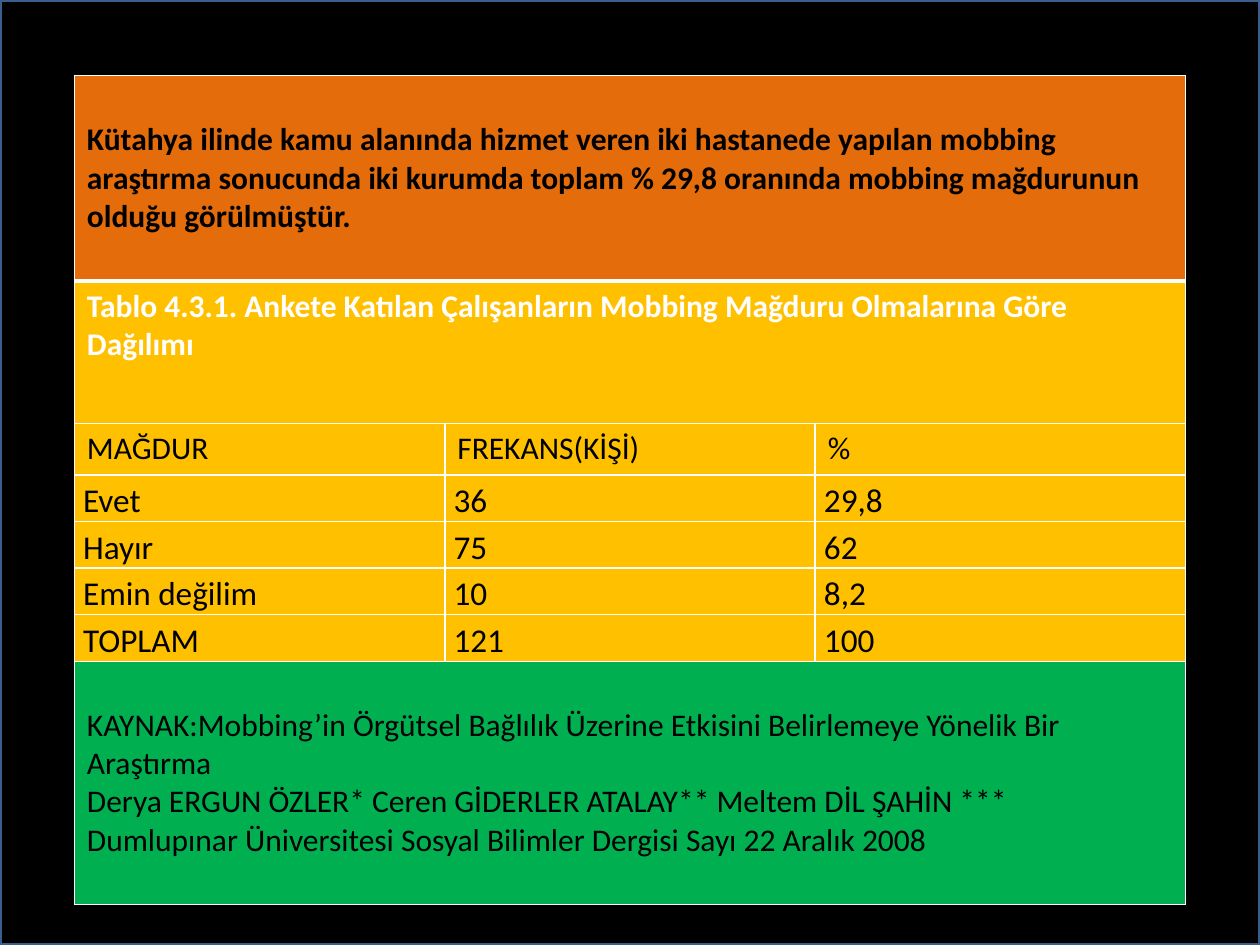
from lxml.etree import SubElement
from pptx import Presentation
from pptx.dml.color import RGBColor
from pptx.enum.shapes import MSO_SHAPE
from pptx.enum.text import MSO_ANCHOR
from pptx.oxml.ns import qn
from pptx.util import Inches, Pt

BLACK = RGBColor(0x00, 0x00, 0x00)
WHITE = RGBColor(0xFF, 0xFF, 0xFF)
BLUE = RGBColor(0x3A, 0x5F, 0x8C)
ORANGE = RGBColor(0xE4, 0x6C, 0x0A)
GOLD = RGBColor(0xFF, 0xC0, 0x00)
GREEN = RGBColor(0x00, 0xB0, 0x50)

INTRO = ("Kütahya ilinde kamu alanında hizmet veren iki hastanede yapılan mobbing "
         "araştırma sonucunda iki kurumda toplam % 29,8 oranında mobbing mağdurunun "
         "olduğu görülmüştür.")
TITLE = "Tablo 4.3.1. Ankete Katılan Çalışanların Mobbing Mağduru Olmalarına Göre Dağılımı"
HEADS = ["MAĞDUR", "FREKANS(KİŞİ)", "%"]
DATA = [
    ["Evet", "36", "29,8"],
    ["Hayır", "75", "62"],
    ["Emin değilim", "10", "8,2"],
    ["TOPLAM", "121", "100"],
]
SOURCE = "\n".join([
    "KAYNAK:Mobbing’in Örgütsel Bağlılık Üzerine Etkisini Belirlemeye Yönelik Bir Araştırma",
    "Derya ERGUN ÖZLER* Ceren GİDERLER ATALAY** Meltem DİL ŞAHİN ***",
    "Dumlupınar Üniversitesi Sosyal Bilimler Dergisi Sayı 22 Aralık 2008",
])
HEIGHTS = [1.63, 1.13, 0.41] + [0.37] * len(DATA) + [1.93]


def add_back(slide, left, top, width, height):
    """Place the framed black backdrop in the given box."""
    back = slide.shapes.add_shape(MSO_SHAPE.RECTANGLE, left, top, width, height)
    back.shadow.inherit = False
    back.fill.solid()
    back.fill.fore_color.rgb = BLACK
    back.line.color.rgb = BLUE
    back.line.width = Pt(2)


def set_edges(cell, top=1, bottom=1):
    """Draw white borders round a cell, with widths in points."""
    props = cell._tc.get_or_add_tcPr()
    for side, size in (("L", 1), ("R", 1), ("T", top), ("B", bottom)):
        edge = SubElement(props, qn(f"a:ln{side}"), w=str(Pt(size)))
        fill = SubElement(edge, qn("a:solidFill"))
        SubElement(fill, qn("a:srgbClr"), val=str(WHITE))


def fill_cell(cell, text, fill, color=BLACK, size=18, bold=False, space=1.0):
    """Write a cell's text and set its fill and font."""
    cell.fill.solid()
    cell.fill.fore_color.rgb = fill
    cell.text_frame.text = text
    for para in cell.text_frame.paragraphs:
        para.line_spacing = space
        para.font.name = "Calibri"
        para.font.size = Pt(size)
        para.font.bold = bold
        para.font.color.rgb = color


def add_survey(slide, left, top, width, height):
    """Place the survey table in the given box."""
    count, last = len(HEADS), len(HEIGHTS) - 1
    frame = slide.shapes.add_table(len(HEIGHTS), count, left, top, width, height)
    table = frame.table
    for col in table.columns:
        col.width = width // count
    for row, tall in zip(table.rows, HEIGHTS):
        row.height = Inches(tall)
    for num, row in enumerate(table.rows):
        for cell in row.cells:
            set_edges(cell, 3 if num == 1 else 1, 3 if num == 0 else 1)

    bands = [(0, INTRO, ORANGE, BLACK, True), (1, TITLE, GOLD, WHITE, True),
             (last, SOURCE, GREEN, BLACK, False)]
    for num, text, fill, color, bold in bands:
        cell = table.cell(num, 0)
        cell.merge(table.cell(num, count - 1))
        fill_cell(cell, text, fill, color, bold=bold)
        if num != 1:
            cell.vertical_anchor = MSO_ANCHOR.MIDDLE

    for col, text in enumerate(HEADS):
        fill_cell(table.cell(2, col), text, GOLD)
    for num, row in enumerate(DATA, 3):
        for col, text in enumerate(row):
            cell = table.cell(num, col)
            fill_cell(cell, text, GOLD, size=19, space=1.15)
            cell.margin_left = cell.margin_right = Inches(0.07)
            cell.margin_top = cell.margin_bottom = 0


def main():
    """Build and save the slide."""
    deck = Presentation()
    deck.slide_width, deck.slide_height = Inches(10), Inches(7.5)
    slide = deck.slides.add_slide(deck.slide_layouts[6])
    add_back(slide, 0, 0, deck.slide_width, deck.slide_height)
    add_survey(slide, Inches(0.59), Inches(0.6), Inches(8.82), Inches(sum(HEIGHTS)))
    deck.save("out.pptx")


if __name__ == "__main__":
    main()
